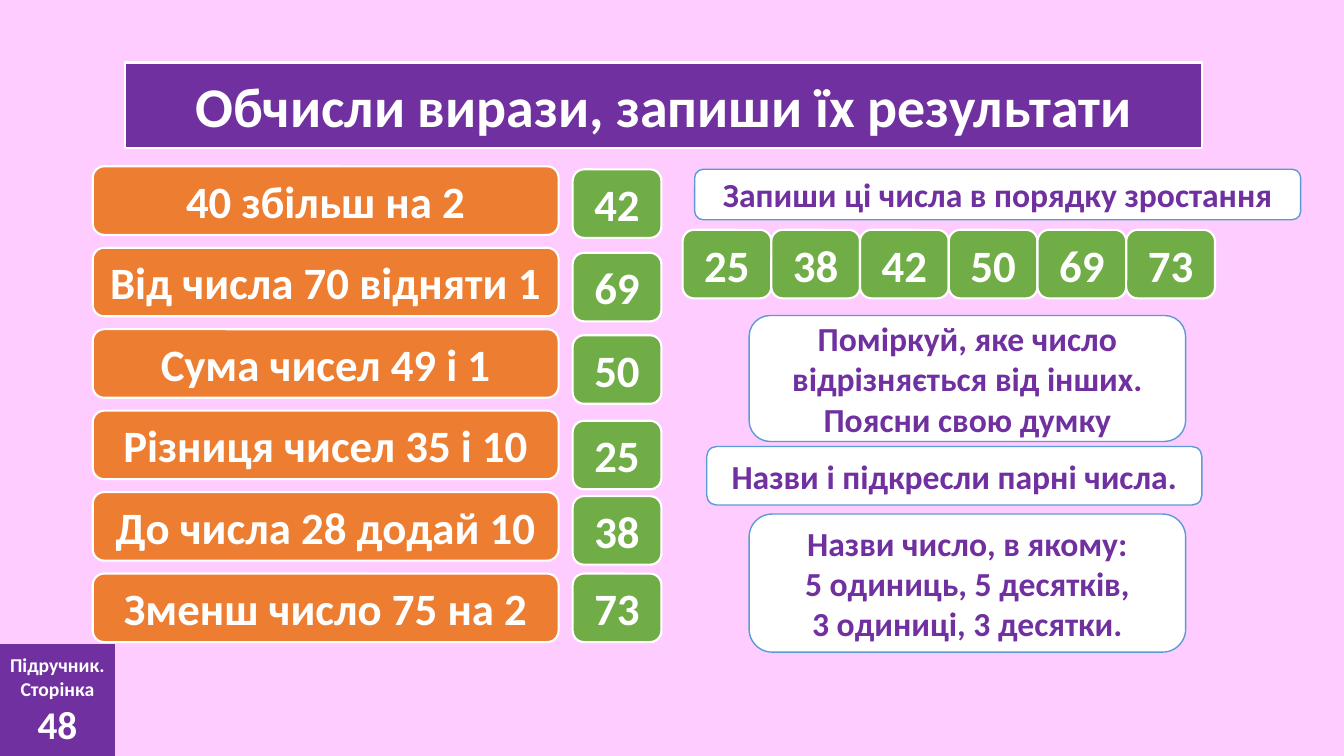
from dataclasses import dataclass

from pptx import Presentation
from pptx.dml.color import RGBColor
from pptx.enum.shapes import MSO_SHAPE
from pptx.enum.text import MSO_ANCHOR, PP_ALIGN
from pptx.util import Inches, Pt

RECT = MSO_SHAPE.RECTANGLE
ROUND = MSO_SHAPE.ROUNDED_RECTANGLE
MIDDLE = MSO_ANCHOR.MIDDLE
CENTER = PP_ALIGN.CENTER


@dataclass(frozen=True)
class Theme:
    font: str = "Calibri"
    back: str = "FFCCFF"
    white: str = "FFFFFF"
    purple: str = "7030A0"
    orange: str = "ED7D31"
    green: str = "70AD47"
    blue: str = "5B9BD5"
    title: int = 40
    task: int = 32
    page: int = 28
    note: int = 24
    label: int = 14


THEME = Theme()

# Task, its answer, and the answer's drop below the task's top
TASKS = [
    ("40 збільш на 2", 42, 0.03),
    ("Від числа 70 відняти 1", 69, 0.05),
    ("Сума чисел 49 і 1", 50, 0.06),
    ("Різниця чисел 35 і 10", 25, 0.1),
    ("До числа 28 додай 10", 38, 0.04),
    ("Зменш число 75 на 2", 73, 0),
]
TILE_W, TILE_H = 0.88, 0.68


def rgb(code):
    return RGBColor.from_string(code)


def add_box(slide, kind, box, fill, edge, width, lines, color, inset=0.1):
    """Draw a filled shape; lines is a list of (text, size) paragraphs."""
    shape = slide.shapes.add_shape(kind, *(Inches(n) for n in box))
    shape.shadow.inherit = False
    shape.fill.solid()
    shape.fill.fore_color.rgb = rgb(fill)
    if edge:
        shape.line.color.rgb = rgb(edge)
        shape.line.width = Pt(width)
    else:
        shape.line.fill.background()
    frame = shape.text_frame
    frame.word_wrap = True
    frame.vertical_anchor = MIDDLE
    frame.margin_left = frame.margin_right = Inches(inset)
    for i, (text, size) in enumerate(lines):
        para = frame.paragraphs[0] if i == 0 else frame.add_paragraph()
        para.alignment = CENTER
        run = para.add_run()
        run.text = text
        run.font.name = THEME.font
        run.font.size = Pt(size)
        run.font.bold = True
        run.font.color.rgb = rgb(color)


def add_title(slide, box):
    add_box(slide, RECT, box, THEME.purple, THEME.white, 1.5,
            [("Обчисли вирази, запиши їх результати", THEME.title)], THEME.white)


def add_tile(slide, box, fill, text):
    add_box(slide, ROUND, box, fill, THEME.white, 1.5,
            [(text, THEME.task)], THEME.white)


def add_tasks(slide, box):
    left, top, width, height = box
    pitch = (height - TILE_H) / (len(TASKS) - 1)
    task_w = 4.62
    for i, (text, answer, drop) in enumerate(TASKS):
        y = top + i * pitch
        add_tile(slide, (left, y, task_w, TILE_H), THEME.orange, text)
        add_tile(slide, (left + width - TILE_W, y + drop, TILE_W, TILE_H),
                 THEME.green, str(answer))


def add_order(slide, left, top):
    """Answers in rising order, side by side."""
    for i, answer in enumerate(sorted(task[1] for task in TASKS)):
        add_tile(slide, (left + i * TILE_W, top, TILE_W, TILE_H),
                 THEME.green, str(answer))


def add_note(slide, box, *lines):
    add_box(slide, ROUND, box, THEME.white, THEME.blue, 1,
            [(line, THEME.note) for line in lines], THEME.purple)


def add_notes(slide, left, top):
    """Column of questions on the right."""
    add_note(slide, (left, top, 6.01, 0.5), "Запиши ці числа в порядку зростання")
    add_order(slide, left - 0.12, top + 0.6)
    add_note(slide, (left + 0.54, top + 1.45, 4.33, 1.25),
             "Поміркуй, яке число відрізняється від інших. Поясни свою думку")
    add_note(slide, (left + 0.12, top + 2.75, 4.91, 0.58),
             "Назви і підкресли парні числа.")
    add_note(slide, (left + 0.54, top + 3.42, 4.33, 1.37),
             "Назви число, в якому:", "5 одиниць, 5 десятків,",
             "3 одиниці, 3 десятки.")


def add_badge(slide, box):
    add_box(slide, RECT, box, THEME.purple, None, 0,
            [("Підручник.", THEME.label), ("Сторінка", THEME.label),
             ("48", THEME.page)], THEME.white, inset=0.05)


def main():
    deck = Presentation()
    deck.slide_width, deck.slide_height = Inches(13.33), Inches(7.5)
    slide = deck.slides.add_slide(deck.slide_layouts[6])
    slide.background.fill.solid()
    slide.background.fill.fore_color.rgb = rgb(THEME.back)
    add_title(slide, (1.24, 0.62, 10.68, 0.85))
    add_tasks(slide, (0.92, 1.65, 5.64, 4.72))
    add_notes(slide, 6.89, 1.68)
    add_badge(slide, (0, 6.39, 1.14, 1.11))
    deck.save("out.pptx")


if __name__ == "__main__":
    main()
